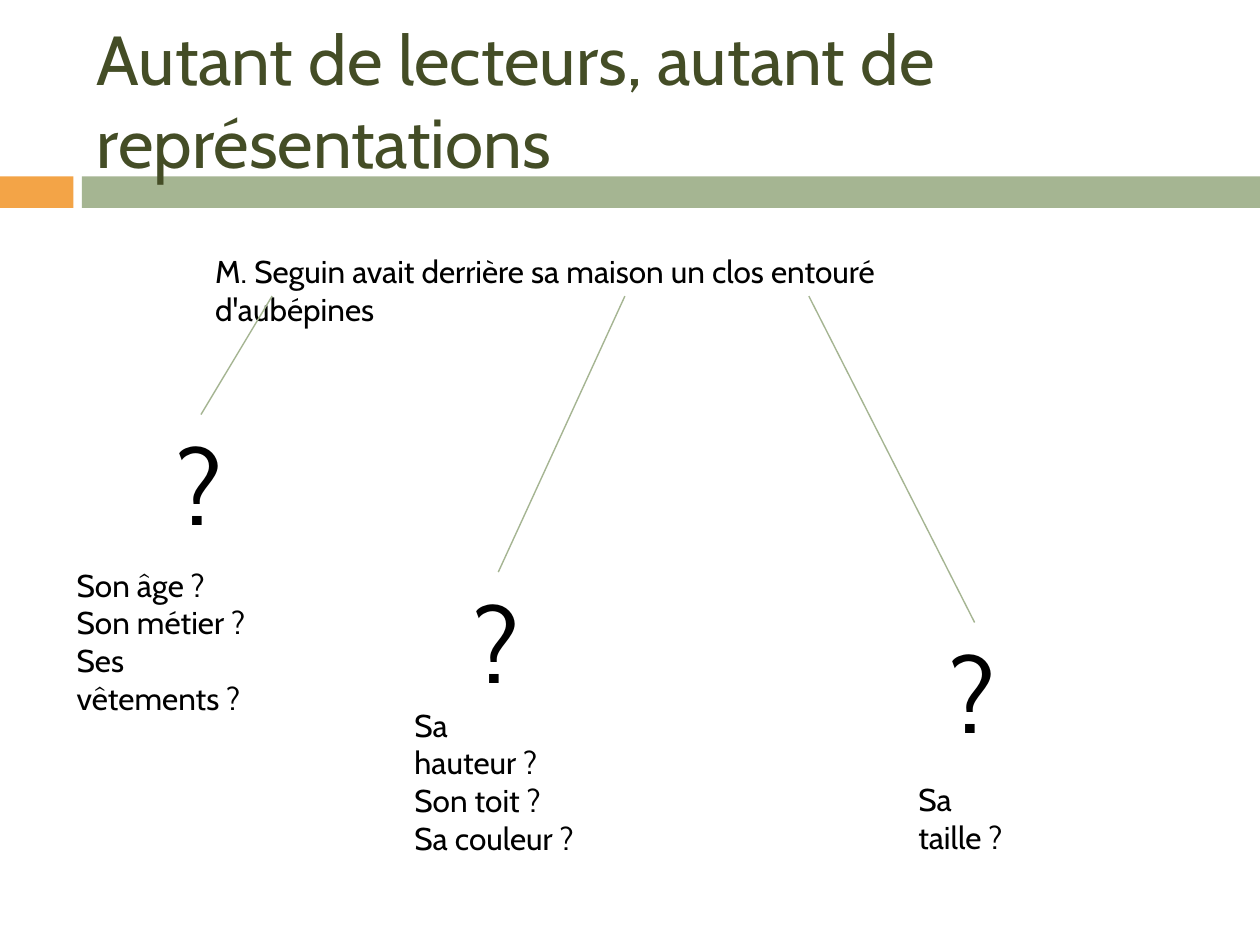
from lxml.etree import SubElement
from pptx import Presentation
from pptx.dml.color import RGBColor
from pptx.enum.shapes import MSO_CONNECTOR, MSO_SHAPE
from pptx.enum.text import MSO_ANCHOR, MSO_AUTO_SIZE, PP_ALIGN
from pptx.oxml.ns import qn
from pptx.util import Pt

FONT = "Cabin"
GREEN = "A5B592"
ORANGE = "F3A447"
OLIVE = "444D26"
BLACK = "000000"


def color(target, code):
    target.rgb = RGBColor.from_string(code)


def write(shape, text, size=18, code=BLACK, anchor=MSO_ANCHOR.TOP):
    frame = shape.text_frame
    frame.word_wrap = True
    frame.auto_size = MSO_AUTO_SIZE.NONE
    frame.vertical_anchor = anchor
    frame.text = text
    for para in frame.paragraphs:
        para.alignment = PP_ALIGN.LEFT
        para.font.name = FONT
        para.font.size = Pt(size)
        color(para.font.color, code)


def label(slide, box, text, **style):
    shape = slide.shapes.add_textbox(*map(Pt, box))
    write(shape, text, **style)
    return shape


def band(slide, box, code):
    shape = slide.shapes.add_shape(MSO_SHAPE.RECTANGLE, *map(Pt, box))
    shape.shadow.inherit = False
    shape.fill.solid()
    color(shape.fill.fore_color, code)
    shape.line.fill.background()


def header(slide, box):
    left, top, width, height = box
    bar = top + 82.8
    band(slide, (0, bar, 42, 18), ORANGE)
    band(slide, (46.8, bar, 673.2, 18), GREEN)
    title = slide.shapes.title
    title.left, title.top, title.width, title.height = map(Pt, box)
    write(title, "Autant de lecteurs, autant de représentations",
          size=39.6, code=OLIVE, anchor=MSO_ANCHOR.MIDDLE)
    slide.shapes._spTree.append(title._element)


def link(slide, mark, end):
    line = slide.shapes.add_connector(
        MSO_CONNECTOR.STRAIGHT, 0, 0, *map(Pt, end))
    line.begin_connect(mark, 0)
    line.line.width = Pt(0.79)
    color(line.line.color, GREEN)
    SubElement(line._element.spPr, qn("a:effectLst"))
    return line


def branch(slide, box, end, notes, place):
    mark = label(slide, box, "?", size=60)
    label(slide, place, "\n".join(notes))
    return link(slide, mark, end)


def tree(slide, box):
    left, top, width, height = box
    phrase = label(slide, box, "M. Seguin avait derrière sa maison "
                               "un clos entouré d'aubépines")
    base = top + height
    mid = left + width / 2
    mark = (42.5, 80)
    branch(slide, (93.6, 236.9, *mark), (155.5, base),
           ["Son âge ?", "Son métier ?", "Ses vêtements ?"],
           (36.7, 319.7, 133.9, 72.7))
    house = branch(slide, (263.5, 326.9, *mark), (mid, base),
                   ["Sa hauteur ?", "Son toit ?", "Sa couleur ?"],
                   (229.7, 399.6, 107.3, 72.7))
    house.end_connect(phrase, 2)
    branch(slide, (535.7, 355.7, *mark), (462.2, base),
           ["Sa taille ?"], (517.7, 442.1, 84.2, 28.8))


def main():
    deck = Presentation()
    deck.slide_width, deck.slide_height = Pt(720), Pt(540)
    slide = deck.slides.add_slide(deck.slide_layouts[5])
    header(slide, (48.2, 18, 642.2, 77.8))
    tree(slide, (115.9, 140.4, 482.4, 28.8))
    deck.save("out.pptx")


if __name__ == "__main__":
    main()
